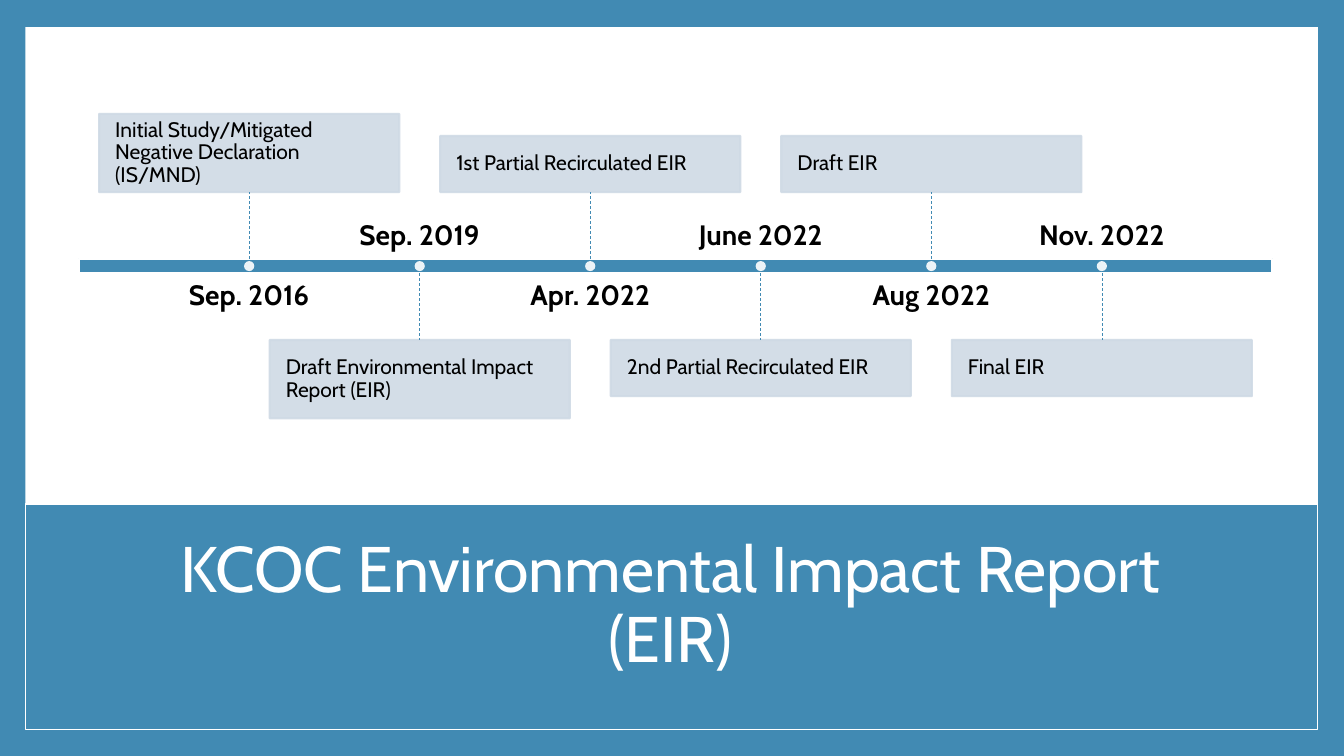
import dataclasses

import pptx
import pptx.dml.color
import pptx.enum.dml
import pptx.enum.shapes
import pptx.enum.text
import pptx.oxml.ns
import pptx.util
from lxml import etree

ANCHOR = pptx.enum.text.MSO_ANCHOR
ALIGN = pptx.enum.text.PP_ALIGN
SHAPE = pptx.enum.shapes.MSO_SHAPE
qn = pptx.oxml.ns.qn


@dataclasses.dataclass(frozen=True)
class Theme:
    font: str = "Cabin"
    blue: str = "418AB3"
    card: str = "CFDAE5"
    white: str = "FFFFFF"
    black: str = "000000"
    title_size: int = 46
    date_size: int = 20
    card_size: int = 15
    line_spacing: float = 0.9
    opacity: int = 90


def rgb(value):
    return pptx.dml.color.RGBColor.from_string(value)


class Slide:
    """Current page: panels use percent of the slide, the timeline uses a grid."""

    WIDTH, HEIGHT = 13.33, 7.5
    # The axis spans seven columns; rows count down from its centre line.
    LEFT, AXIS = 0.78, 2.64
    COLUMN, ROW = 11.84 / 7, 0.44 / 3

    def __init__(self, deck, theme):
        self.theme = theme
        deck.slide_width = pptx.util.Inches(self.WIDTH)
        deck.slide_height = pptx.util.Inches(self.HEIGHT)
        self.page = deck.slides.add_slide(deck.slide_layouts[5])

    def share(self, left, top, width, height):
        inches = (left * self.WIDTH, top * self.HEIGHT,
                  width * self.WIDTH, height * self.HEIGHT)
        return [pptx.util.Inches(value / 100) for value in inches]

    def point(self, column, row):
        return (pptx.util.Inches(self.LEFT + column * self.COLUMN),
                pptx.util.Inches(self.AXIS + row * self.ROW))

    def cell(self, column, row, columns, rows):
        return [*self.point(column, row),
                pptx.util.Inches(columns * self.COLUMN),
                pptx.util.Inches(rows * self.ROW)]

    def shape(self, place, fill, line=None, weight=1, kind=SHAPE.RECTANGLE, opacity=100):
        shape = self.page.shapes.add_shape(kind, *place)
        shape.shadow.inherit = False
        shape.fill.solid()
        shape.fill.fore_color.rgb = rgb(fill)
        if line:
            shape.line.color.rgb = rgb(line)
            shape.line.width = pptx.util.Pt(weight)
        else:
            shape.line.fill.background()
        if opacity < 100:
            for color in shape.element.iter(qn("a:srgbClr")):
                etree.SubElement(color, qn("a:alpha"), val=str(opacity * 1000))
        return shape

    def set_text(self, box, text, size, color, align, anchor, inset, bold=False):
        frame = box.text_frame
        frame.text = text
        frame.word_wrap = True
        frame.auto_size = pptx.enum.text.MSO_AUTO_SIZE.NONE
        frame.vertical_anchor = anchor
        frame.margin_left = frame.margin_right = pptx.util.Inches(inset)
        frame.margin_top = frame.margin_bottom = pptx.util.Inches(inset)
        para = frame.paragraphs[0]
        para.alignment = align
        para.line_spacing = self.theme.line_spacing
        for span in para.runs:
            span.font.name = self.theme.font
            span.font.size = pptx.util.Pt(size)
            span.font.bold = bold
            span.font.color.rgb = rgb(color)

    def title(self, text, place, behind):
        box = self.page.shapes.title
        box.left, box.top, box.width, box.height = place
        behind.element.addnext(box.element)
        self.set_text(box, text, self.theme.title_size, self.theme.white,
                      ALIGN.CENTER, ANCHOR.MIDDLE, 0.1)

    def date(self, text, place, anchor):
        box = self.page.shapes.add_textbox(*place)
        self.set_text(box, text, self.theme.date_size, self.theme.black,
                      ALIGN.CENTER, anchor, 0, bold=True)

    def card(self, text, place):
        box = self.shape(place, self.theme.card, self.theme.card, 1.5,
                         opacity=self.theme.opacity)
        self.set_text(box, text, self.theme.card_size, self.theme.black,
                      ALIGN.LEFT, ANCHOR.MIDDLE, 0.16)

    def stem(self, start, end):
        stem = self.page.shapes.add_connector(
            pptx.enum.shapes.MSO_CONNECTOR.STRAIGHT, *start, *end)
        stem.line.color.rgb = rgb(self.theme.blue)
        stem.line.width = pptx.util.Pt(0.5)
        stem.line.dash_style = pptx.enum.dml.MSO_LINE.DASH
        etree.SubElement(stem.element.spPr, qn("a:effectLst"))

    def dot(self, column):
        place = self.cell(column - 0.03, -0.34, 0.06, 0.68)
        self.shape(place, self.theme.white, kind=SHAPE.OVAL, opacity=self.theme.opacity)

    def milestone(self, column, date, text, rows, card_above):
        """Put the card on one side of the axis and its date on the other."""
        side = -1 if card_above else 1
        self.date(date, self.cell(column - 0.8, 1 if card_above else -4, 1.6, 3),
                  ANCHOR.TOP if card_above else ANCHOR.BOTTOM)
        self.card(text, self.cell(column - 0.88, -5 - rows if card_above else 5, 1.76, rows))
        self.stem(self.point(column, side * 0.5), self.point(column, side * 5))
        self.dot(column)


TALL, SHORT = 5.3, 3.8
MILESTONES = [
    ("Sep. 2016", "Initial Study/Mitigated Negative Declaration (IS/MND)", TALL),
    ("Sep. 2019", "Draft Environmental Impact Report (EIR)", TALL),
    ("Apr. 2022", "1st Partial Recirculated EIR", SHORT),
    ("June 2022", "2nd Partial Recirculated EIR", SHORT),
    ("Aug 2022", "Draft EIR", SHORT),
    ("Nov. 2022", "Final EIR", SHORT),
]


def main():
    deck = pptx.Presentation()
    theme = Theme()
    slide = Slide(deck, theme)

    # Frame, white panel and title band
    slide.shape(slide.share(0, 0, 100, 100), theme.blue)
    slide.shape(slide.share(1.88, 3.6, 96.17, 92.93), theme.white)
    band = slide.shape(slide.share(1.88, 66.67, 96.17, 29.87), theme.blue, theme.white)
    slide.title("KCOC Environmental Impact Report (EIR)",
                slide.share(9.38, 70.4, 81, 19.73), band)

    # Timeline axis
    slide.shape(slide.cell(0, -0.5, 7, 1), theme.blue, theme.white, 1.5)

    # Milestones, with cards alternating above and below
    for index, (date, text, rows) in enumerate(MILESTONES):
        slide.milestone(index + 1, date, text, rows, card_above=index % 2 == 0)

    deck.save("out.pptx")


if __name__ == "__main__":
    main()
